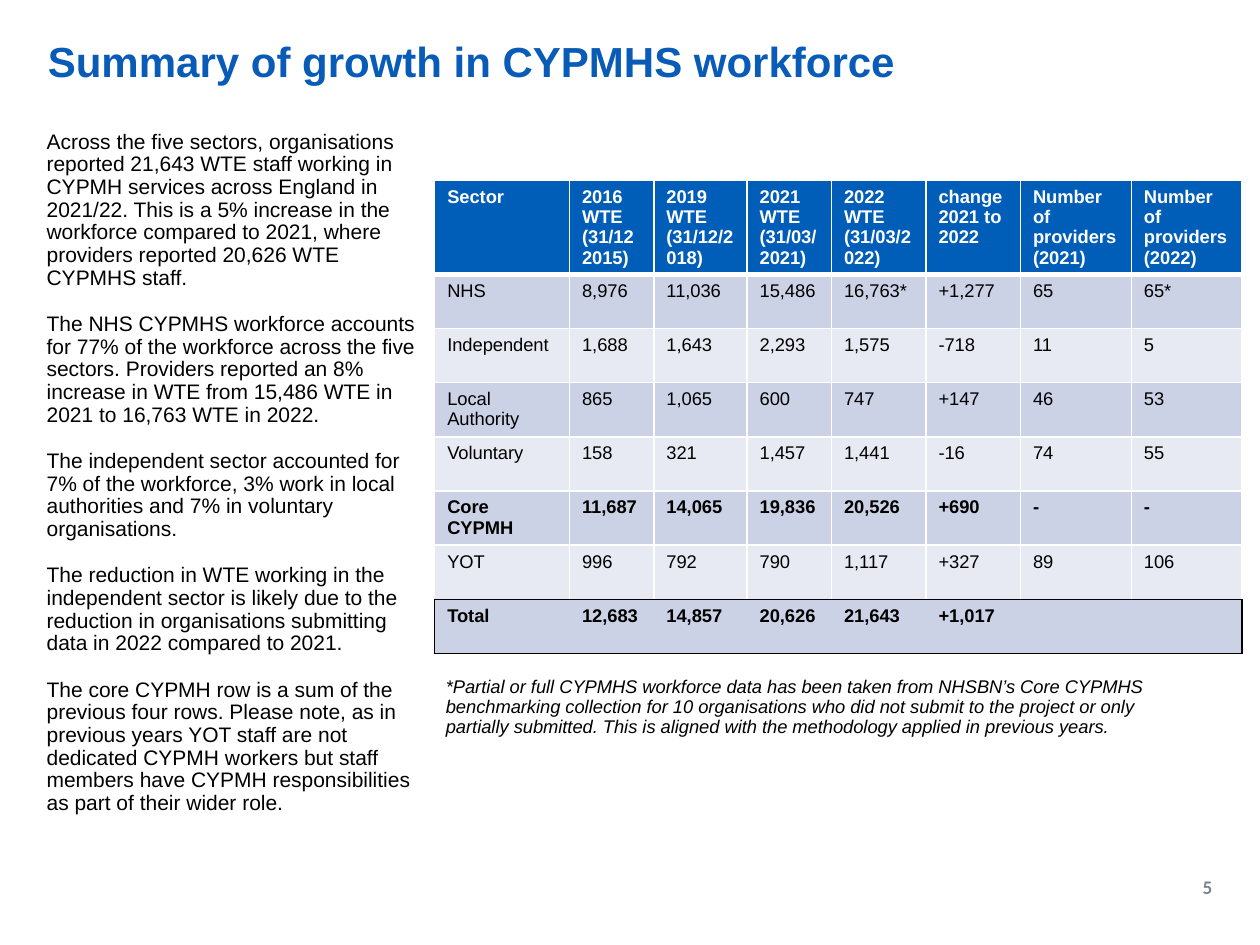
from dataclasses import dataclass

import lxml.etree
import pptx
import pptx.dml.color
import pptx.enum.text
import pptx.oxml.ns
import pptx.util

Inches = pptx.util.Inches
Pt = pptx.util.Pt
ALIGN = pptx.enum.text.PP_ALIGN
ANCHOR = pptx.enum.text.MSO_ANCHOR

COLORS = {
    "title": "085BB7",
    "head": "005EB8",
    "dark": "CCD2E6",
    "light": "E7EAF3",
    "white": "FFFFFF",
    "black": "000000",
    "gray": "768691",
}


@dataclass
class Box:
    left: float
    top: float
    width: float
    height: float


@dataclass
class Style:
    size: float
    color: str
    bold: bool = False
    italic: bool = False
    face: str = "Arial"


@dataclass
class Row:
    cells: list[str]
    bold: bool = False


TITLE = "Summary of growth in CYPMHS workforce"
BODY = [
    "Across the five sectors, organisations reported 21,643 WTE staff working in CYPMH services across England in 2021/22. This is a 5% increase in the workforce compared to 2021, where providers reported 20,626 WTE CYPMHS staff.",
    "The NHS CYPMHS workforce accounts for 77% of the workforce across the five sectors. Providers reported an 8% increase in WTE from 15,486 WTE in 2021 to 16,763 WTE in 2022.",
    "The independent sector accounted for 7% of the workforce, 3% work in local authorities and 7% in voluntary organisations.",
    "The reduction in WTE working in the independent sector is likely due to the reduction in organisations submitting data in 2022 compared to 2021.",
    "The core CYPMH row is a sum of the previous four rows. Please note, as in previous years YOT staff are not dedicated CYPMH workers but staff members have CYPMH responsibilities as part of their wider role.",
]
NOTE = "*Partial or full CYPMHS workforce data has been taken from NHSBN’s Core CYPMHS benchmarking collection for 10 organisations who did not submit to the project or only partially submitted. This is aligned with the methodology applied in previous years."
WIDTHS = [1.07, 0.67, 0.74, 0.67, 0.75, 0.75, 0.88, 0.88]
ROWS = [
    Row(["Sector", "2016 WTE\n(31/122015)", "2019 WTE\n(31/12/2018)",
         "2021\nWTE\n(31/03/2021)", "2022 WTE (31/03/2022)",
         "change 2021 to 2022", "Number of providers (2021)",
         "Number of providers (2022)"], True),
    Row(["NHS", "8,976", "11,036", "15,486", "16,763*", "+1,277", "65", "65*"]),
    Row(["Independent", "1,688", "1,643", "2,293", "1,575", "-718", "11", "5"]),
    Row(["Local Authority", "865", "1,065", "600", "747", "+147", "46", "53"]),
    Row(["Voluntary", "158", "321", "1,457", "1,441", "-16", "74", "55"]),
    Row(["Core CYPMH", "11,687", "14,065", "19,836", "20,526", "+690", "-", "-"], True),
    Row(["YOT", "996", "792", "790", "1,117", "+327", "89", "106"]),
    Row(["Total", "12,683", "14,857", "20,626", "21,643", "+1,017", "", ""], True),
]


def rgb(name: str) -> pptx.dml.color.RGBColor:
    return pptx.dml.color.RGBColor.from_string(COLORS[name])


def place(shape, box: Box) -> None:
    shape.left, shape.top = Inches(box.left), Inches(box.top)
    shape.width, shape.height = Inches(box.width), Inches(box.height)


def format_text(frame, style: Style) -> None:
    for para in frame.paragraphs:
        for run in para.runs:
            font = run.font
            font.name, font.size = style.face, Pt(style.size)
            font.bold, font.italic = style.bold, style.italic
            font.color.rgb = rgb(style.color)


def write(shape, box: Box, lines: list[str], style: Style) -> None:
    """Place a shape and fill it with one plain paragraph per line."""
    place(shape, box)
    frame = shape.text_frame
    frame.text = "\n".join(lines)
    frame.word_wrap = True
    frame.auto_size = pptx.enum.text.MSO_AUTO_SIZE.NONE
    format_text(frame, style)


def space(frame) -> None:
    """Set tight lines, with gaps between paragraphs and no bullets."""
    for num, para in enumerate(frame.paragraphs):
        para.line_spacing = 0.9
        para.space_before = Pt(7.5 if num else 0)
        para.space_after = Pt(6)
        props = para._p.get_or_add_pPr()
        props.set("marL", "0")
        props.set("indent", "0")
        lxml.etree.SubElement(props, pptx.oxml.ns.qn("a:buNone"))


def set_edge(cell, side: str, spot: int, color: str | None, width: float) -> None:
    """Draw one cell border, or clear it when there is no color."""
    qn = pptx.oxml.ns.qn
    line = lxml.etree.Element(qn(f"a:ln{side}"), w=str(Pt(width)))
    if color:
        fill = lxml.etree.SubElement(line, qn("a:solidFill"))
        lxml.etree.SubElement(fill, qn("a:srgbClr"), val=COLORS[color])
    else:
        lxml.etree.SubElement(line, qn("a:noFill"))
    cell._tc.get_or_add_tcPr().insert(spot, line)


def set_edges(cell, row: int, col: int) -> None:
    last, end = len(ROWS) - 1, len(WIDTHS) - 1
    total = row == last
    edges = {
        "L": (("black" if col == 0 else None) if total else "white", 1),
        "R": (("black" if col == end else None) if total else "white", 1),
        "T": ("black" if total else "white", 3 if row == 1 else 1),
        "B": ("black" if row >= last - 1 else "white", 3 if row == 0 else 1),
    }
    for spot, (side, (color, width)) in enumerate(edges.items()):
        set_edge(cell, side, spot, color, width)


def add_grid(slide, box: Box) -> None:
    frame = slide.shapes.add_table(
        len(ROWS), len(WIDTHS), Inches(box.left), Inches(box.top),
        Inches(box.width), Inches(box.height))
    table = frame.table
    for col, width in enumerate(WIDTHS):
        table.columns[col].width = Inches(width)
    for num, row in enumerate(ROWS):
        table.rows[num].height = Inches(0.43 if num else 0.52)
        shade = ("dark" if num % 2 else "light") if num else "head"
        style = Style(10.5, "black" if num else "white", row.bold)
        for col, text in enumerate(row.cells):
            cell = table.cell(num, col)
            cell.text_frame.text = text
            cell.fill.solid()
            cell.fill.fore_color.rgb = rgb(shade)
            format_text(cell.text_frame, style)
            set_edges(cell, num, col)


def main() -> None:
    deck = pptx.Presentation()
    deck.slide_width, deck.slide_height = Inches(10), Inches(7.5)
    slide = deck.slides.add_slide(deck.slide_layouts[1])

    title = slide.shapes.title
    write(title, Box(0.28, 0.02, 9.45, 0.97), [TITLE], Style(24, "title", True))
    title.text_frame.vertical_anchor = ANCHOR.MIDDLE
    title.text_frame.paragraphs[0].alignment = ALIGN.LEFT
    title.text_frame.paragraphs[0].line_spacing = 0.9

    body = slide.placeholders[1]
    write(body, Box(0.27, 0.99, 3.22, 5.97), BODY, Style(12, "black"))
    space(body.text_frame)

    page = slide.shapes.add_textbox(0, 0, 0, 0)
    write(page, Box(7.95, 6.84, 1.77, 0.4), ["5"],
          Style(11, "gray", True, face="Calibri"))
    page.text_frame.vertical_anchor = ANCHOR.MIDDLE
    page.text_frame.paragraphs[0].alignment = ALIGN.RIGHT

    add_grid(slide, Box(3.45, 1.43, 6.42, 3.86))

    note = slide.shapes.add_textbox(0, 0, 0, 0)
    write(note, Box(3.44, 5.33, 6.15, 0.87), [NOTE],
          Style(10.5, "black", italic=True))
    space(note.text_frame)

    deck.save("out.pptx")


if __name__ == "__main__":
    main()
